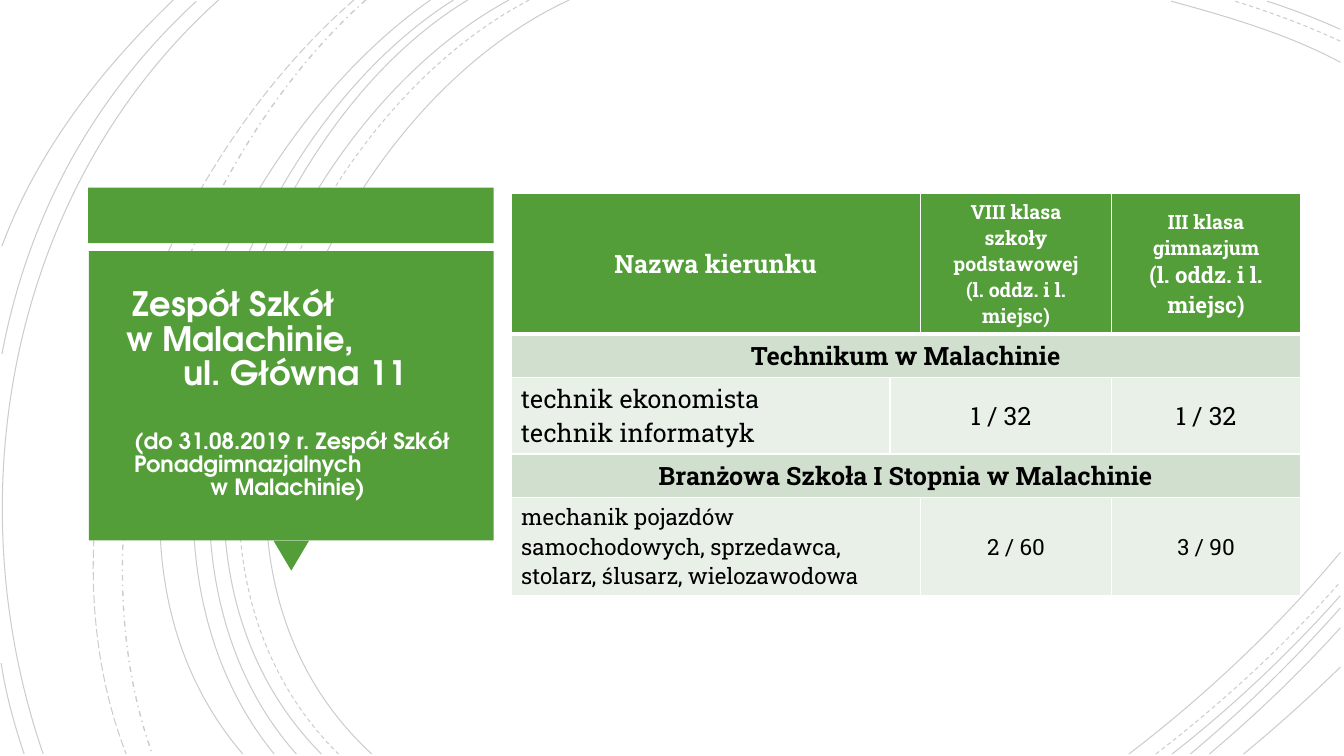
from dataclasses import dataclass

from lxml import etree
from pptx import Presentation
from pptx.dml.color import RGBColor
from pptx.enum.dml import MSO_LINE
from pptx.enum.shapes import MSO_SHAPE
from pptx.enum.text import MSO_ANCHOR, MSO_AUTO_SIZE, PP_ALIGN
from pptx.oxml.ns import qn
from pptx.util import Cm, Pt

LEFT, CENTER = PP_ALIGN.LEFT, PP_ALIGN.CENTER
TOP, MIDDLE = MSO_ANCHOR.TOP, MSO_ANCHOR.MIDDLE
SOLID, DASH = MSO_LINE.SOLID, MSO_LINE.DASH
DASH_DOT, LONG_DASH = MSO_LINE.DASH_DOT, MSO_LINE.LONG_DASH
RECTANGLE, TRIANGLE = MSO_SHAPE.RECTANGLE, MSO_SHAPE.ISOSCELES_TRIANGLE

BOTTOM, RIGHT_EDGE = 19, 33.78

LONG_ARCS = [
    (14.35, 8, 2.92, 3.63, 13.72, 9.37, SOLID),
    (13.34, 7.24, 3.18, 3.12, 13.64, 8.53, DASH),
    (12.83, 6.86, 3.23, 2.79, 13.64, 8.1, SOLID),
    (11.79, 6.2, 3.38, 2.79, 13.74, 7.47, SOLID),
    (11.43, 5.87, 3.51, 2.46, 13.54, 6.91, SOLID),
    (10.85, 5.51, 3.73, 1.35, 13.44, 6.12, SOLID),
    (9.22, 4.47, 4.22, 1.65, 12.93, 3.84, DASH_DOT),
    (8.92, 3.99, 4.29, 0.74, 12.67, 3.18, LONG_DASH),
    (5.51, 0.28, 4.7, -1.17, 12.45, 1.09, SOLID),
]
LOWER_RIGHT_ARCS = [
    (28.45, 30.38, 17.53, 32.21, 15.8, 13.92, SOLID),
    (29.13, 30.78, 17.73, 32.39, 16.26, 14.66, DASH),
    (29.54, 31.06, 17.81, 32.49, 16.46, 15.01, SOLID),
    (30, 31.34, 17.88, 32.61, 16.64, 15.32, SOLID),
    (30.48, 31.65, 18.01, 32.77, 16.94, 15.82, SOLID),
    (31.34, 32.18, 18.31, 32.99, 17.58, 16.81, SOLID),
]
CORNER_ARCS = [
    ((RIGHT_EDGE, 1.57), (32.46, 0.86), (30.91, 0.41), (29.51, 0.03), SOLID),
    ((RIGHT_EDGE, 1.04), (32.92, 0.64), (32, 0.3), (31.12, 0.03), DASH),
    ((RIGHT_EDGE, 0.74), (33.2, 0.48), (32.56, 0.23), (31.93, 0.03), SOLID),
    ((4.95, 0.03), (2.34, 2.44), (0.71, 5.44), (0.05, 8.92), SOLID),
    ((0.03, 16.71), (0.15, 17.5), (0.36, 18.26), (0.61, BOTTOM), SOLID),
    ((4.37, 0), (2.54, 1.75), (0.94, 3.81), (0.05, 6.2), SOLID),
]


@dataclass(frozen=True)
class Theme:
    green: str = "549E39"
    section: str = "D1DFCE"
    row: str = "E9F0E8"
    white: str = "FFFFFF"
    black: str = "000000"
    heading_font: str = "TeX Gyre Adventor"
    body_font: str = "Roboto Slab"
    large: int = 24
    medium: int = 18
    normal: int = 16
    small: int = 14
    arc_opacity: int = 20


class SlideBuilder:
    def __init__(self, slide, theme):
        self.slide = slide
        self.theme = theme

    def arc(self, start, control_a, control_b, end, dash):
        points = [(Cm(x), Cm(y)) for x, y in (start, control_a, control_b, end)]
        builder = self.slide.shapes.build_freeform(*points[0])
        builder.add_line_segments(points[1:], close=False)
        curve = builder.convert_to_shape()
        outline = curve.element.spPr.find(".//" + qn("a:path"))
        bezier = etree.SubElement(outline, qn("a:cubicBezTo"))
        for segment in outline.findall(qn("a:lnTo")):
            bezier.append(segment[0])
            outline.remove(segment)
        curve.shadow.inherit = False
        curve.fill.background()
        curve.line.color.rgb = RGBColor.from_string(self.theme.black)
        curve.line.width = Pt(1 if dash == DASH_DOT else 0.75)
        curve.line.dash_style = dash
        color = curve.element.spPr.find(".//" + qn("a:srgbClr"))
        etree.SubElement(color, qn("a:alpha"), val=str(self.theme.arc_opacity * 1000))

    def block(self, preset, left, top, width, height, rotation=0):
        block = self.slide.shapes.add_shape(preset, Cm(left), Cm(top), Cm(width), Cm(height))
        block.shadow.inherit = False
        block.fill.solid()
        block.fill.fore_color.rgb = RGBColor.from_string(self.theme.green)
        block.line.fill.background()
        block.rotation = rotation

    def run(self, paragraph, text, size, color, font, bold):
        run = paragraph.add_run()
        run.text = text
        run.font.size = Pt(size)
        run.font.name = font
        run.font.bold = bold
        run.font.color.rgb = RGBColor.from_string(color)

    def title(self, left, top, width, height, lines):
        title = self.slide.shapes.title
        title.left, title.top, title.width, title.height = map(Cm, (left, top, width, height))
        title.element.getparent().append(title.element)
        frame = title.text_frame
        frame.word_wrap = True
        frame.auto_size = MSO_AUTO_SIZE.NONE
        frame.vertical_anchor = MIDDLE
        frame.margin_left = frame.margin_right = Cm(0.64)
        frame.margin_top = frame.margin_bottom = Cm(0.64)
        for index, (text, size, indent, gap) in enumerate(lines):
            paragraph = frame.add_paragraph() if index else frame.paragraphs[0]
            paragraph.alignment = LEFT
            paragraph.line_spacing = 0.85
            paragraph.space_before = Pt(gap)
            properties = paragraph._p.get_or_add_pPr()
            properties.set("marL", str(Cm(indent)))
            properties.set("indent", "0")
            self.run(paragraph, text, size, self.theme.white, self.theme.heading_font, True)

    def table(self, left, top, column_widths, row_heights):
        frame = self.slide.shapes.add_table(
            len(row_heights), len(column_widths), Cm(left), Cm(top),
            Cm(sum(column_widths)), Cm(sum(row_heights)))
        for column, width in zip(frame.table.columns, column_widths):
            column.width = Cm(width)
        for row, height in zip(frame.table.rows, row_heights):
            row.height = Cm(height)
        return frame.table

    def border(self, cell, side, width):
        line = etree.SubElement(cell._tc.get_or_add_tcPr(), qn("a:" + side), w=str(Pt(width)))
        fill = etree.SubElement(line, qn("a:solidFill"))
        etree.SubElement(fill, qn("a:srgbClr"), val=self.theme.white)

    def table_row(self, table, row, fill, color, bold, entries):
        for cell in table.rows[row].cells:
            for side in ("lnL", "lnR", "lnT", "lnB"):
                thick = (row, side) in ((0, "lnB"), (1, "lnT"))
                self.border(cell, side, 3 if thick else 1)
            cell.fill.solid()
            cell.fill.fore_color.rgb = RGBColor.from_string(fill)
        for first, last, alignment, anchor, lines in entries:
            cell = table.cell(row, first)
            if last > first:
                cell.merge(table.cell(row, last))
            cell.vertical_anchor = anchor
            for index, (text, size) in enumerate(lines):
                frame = cell.text_frame
                paragraph = frame.add_paragraph() if index else frame.paragraphs[0]
                paragraph.alignment = alignment
                self.run(paragraph, text, size, color, self.theme.body_font, bold)


def main():
    deck = Presentation()
    deck.slide_width, deck.slide_height = Cm(33.87), Cm(19.05)
    theme = Theme()
    page = SlideBuilder(deck.slides.add_slide(deck.slide_layouts[5]), theme)

    for x0, x1, y1, x2, y2, x3, dash in LONG_ARCS:
        page.arc((x0, 0), (x1, y1), (x2, y2), (x3, BOTTOM), dash)
    for x0, x1, y1, x2, y2, y3, dash in LOWER_RIGHT_ARCS:
        page.arc((x0, BOTTOM), (x1, y1), (x2, y2), (RIGHT_EDGE, y3), dash)
    for corner_arc in CORNER_ARCS:
        page.arc(*corner_arc)

    page.block(RECTANGLE, 2.22, 4.73, 10.22, 1.4)
    page.block(TRIANGLE, 6.89, 13.62, 0.9, 0.76, rotation=180)
    page.block(RECTANGLE, 2.24, 6.33, 10.2, 7.29)
    page.title(2.46, 6.53, 9.73, 6.83, [
        ("Zespół Szkół", theme.large, 0.25, 0),
        ("w Malachinie,", theme.large, 0.08, 0),
        ("ul. Główna 11", theme.large, 1.52, 0),
        ("(do 31.08.2019 r. Zespół Szkół Ponadgimnazjalnych", theme.normal, 0.28, 28),
        ("w Malachinie)", theme.normal, 2.2, 0),
    ])

    medium, normal, small = theme.medium, theme.normal, theme.small
    courses = page.table(12.88, 4.88, (9.55, 0.76, 4.83, 4.75), (3.23, 1.02, 1.78, 1.02, 2.29))
    places = "(l. oddz. i l. miejsc)"
    page.table_row(courses, 0, theme.green, theme.white, True, [
        (0, 1, CENTER, MIDDLE, [("Nazwa kierunku", medium)]),
        (2, 2, CENTER, MIDDLE, [("VIII klasa", small), ("szkoły podstawowej", small),
                                (places, small)]),
        (3, 3, CENTER, MIDDLE, [("III klasa gimnazjum", small), (places, normal)]),
    ])
    for row, school in ((1, "Technikum w Malachinie"),
                        (3, "Branżowa Szkoła I Stopnia w Malachinie")):
        page.table_row(courses, row, theme.section, theme.black, True,
                       [(0, 3, CENTER, TOP, [(school, medium)])])
    page.table_row(courses, 2, theme.row, theme.black, False, [
        (0, 0, LEFT, TOP, [("technik ekonomista", medium), ("technik informatyk", medium)]),
        (1, 2, CENTER, MIDDLE, [("1 / 32", medium)]),
        (3, 3, CENTER, MIDDLE, [("1 / 32", medium)]),
    ])
    trades = "mechanik pojazdów samochodowych, sprzedawca, stolarz, ślusarz, wielozawodowa"
    page.table_row(courses, 4, theme.row, theme.black, False, [
        (0, 1, LEFT, TOP, [(trades, normal)]),
        (2, 2, CENTER, MIDDLE, [("2 / 60", normal)]),
        (3, 3, CENTER, MIDDLE, [("3 / 90", normal)]),
    ])
    deck.save("out.pptx")


if __name__ == "__main__":
    main()
